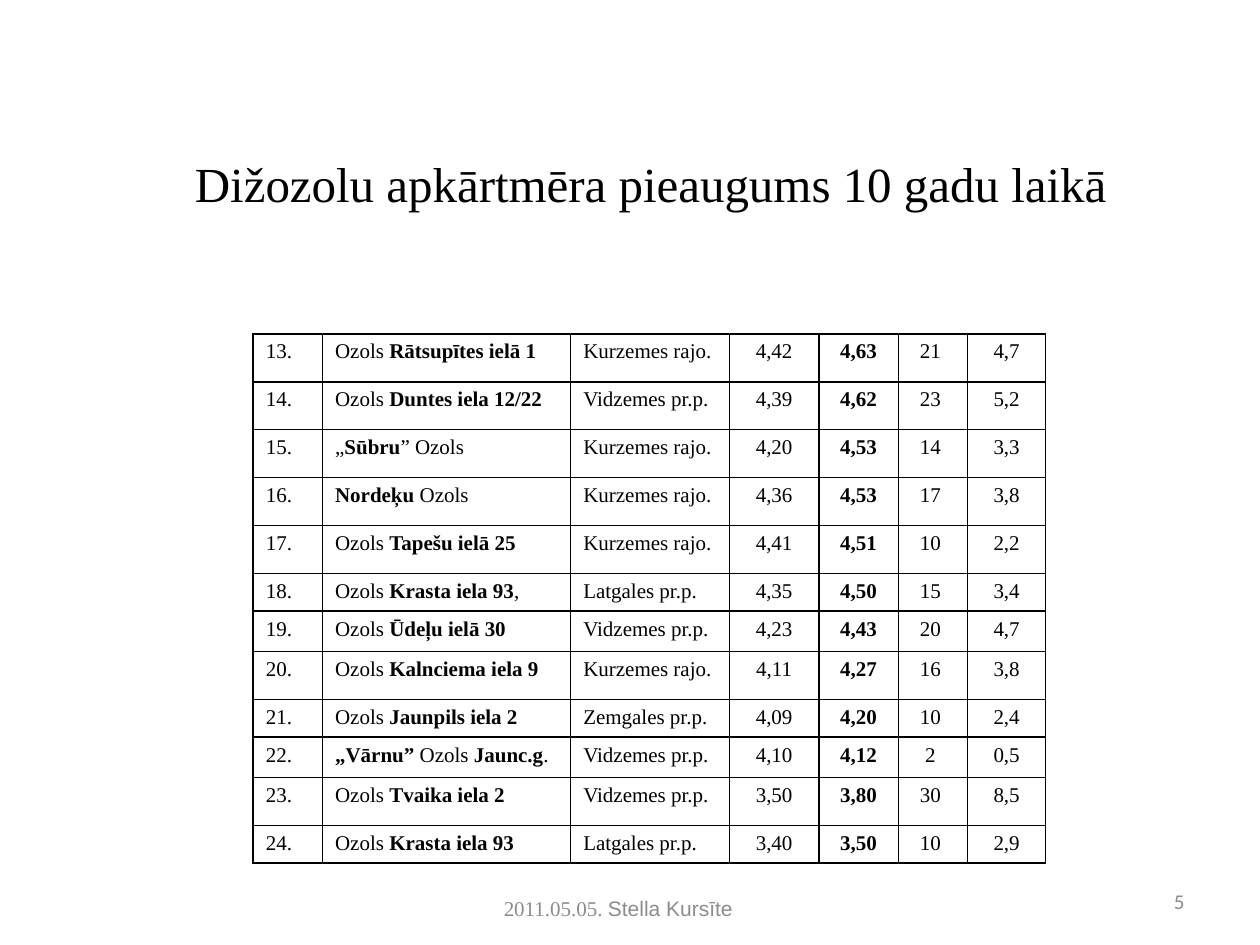
from dataclasses import dataclass

from lxml.etree import SubElement
from pptx import Presentation
from pptx.dml.color import RGBColor
from pptx.enum.text import MSO_ANCHOR, PP_ALIGN
from pptx.oxml import parse_xml
from pptx.oxml.ns import nsdecls, qn
from pptx.util import Inches, Pt


@dataclass(frozen=True)
class Theme:
    """Fonts, colours and type sizes of the slide."""
    serif: str = "Times New Roman"
    sans: str = "Arial"
    page: str = "Calibri"
    ink: str = "000000"
    grey: str = "8C8C8C"
    head: int = 28
    body: int = 12
    rule: int = 1


def write(para, text, font, size, color, bold=False, align=PP_ALIGN.LEFT):
    """Add text to a paragraph; asterisks switch bold on and off."""
    para.alignment = align
    for i, part in enumerate(text.split("*")):
        if part:
            run = para.add_run()
            run.text = part
            run.font.name = font
            run.font.size = Pt(size)
            run.font.bold = bold or i % 2 == 1
            run.font.color.rgb = RGBColor.from_string(color)


class Deck:
    """Draw on the current slide in a grid of 100 columns and 75 rows."""

    def __init__(self, theme):
        """Start a deck with one blank slide."""
        self.theme = theme
        self.prs = Presentation()
        self.prs.slide_width = Inches(10)
        self.prs.slide_height = Inches(7.5)
        self.slide = self.prs.slides.add_slide(self.prs.slide_layouts[6])

    def span(self, *cells):
        """Turn grid steps into lengths."""
        return [round(n * self.prs.slide_width / 100) for n in cells]

    def text(self, box, *parts, **form):
        """Place one line made of (text, font) parts."""
        frame = self.slide.shapes.add_textbox(*self.span(*box)).text_frame
        frame.word_wrap = True
        frame.vertical_anchor = MSO_ANCHOR.MIDDLE
        for words, font in parts:
            write(frame.paragraphs[0], words, font, **form)

    def border(self, cell):
        """Rule all four sides of a cell."""
        props = cell._tc.get_or_add_tcPr()
        for i, side in enumerate(("lnL", "lnR", "lnT", "lnB")):
            line = parse_xml(f'<a:{side} {nsdecls("a")} w="{Pt(self.theme.rule)}"/>')
            fill = SubElement(line, qn("a:solidFill"))
            SubElement(fill, qn("a:srgbClr"), val=self.theme.ink)
            props.insert(i, line)

    def table(self, spot, cols, rows, data, mid, strong):
        """Place a ruled table; mid is the first centred column."""
        look = self.theme
        size = self.span(*spot, sum(cols), sum(rows))
        grid = self.slide.shapes.add_table(len(rows), len(cols), *size).table
        grid.first_row = grid.horz_banding = False
        for col, wide in zip(grid.columns, self.span(*cols)):
            col.width = wide
        for row, high, line in zip(grid.rows, self.span(*rows), data):
            row.height = high
            for i, (cell, words) in enumerate(zip(row.cells, line)):
                cell.fill.background()
                self.border(cell)
                para = cell.text_frame.paragraphs[0]
                write(para, words, look.serif, look.body, look.ink, i == strong,
                      PP_ALIGN.CENTER if i >= mid else PP_ALIGN.LEFT)
                hang = self.span(3.8)[0]
                props = para._p.get_or_add_pPr()
                props.set("marL", str(hang))
                props.set("indent", str(-hang))


KURZEME, VIDZEME = "Kurzemes rajo.", "Vidzemes pr.p."
LATGALE, ZEMGALE = "Latgales pr.p.", "Zemgales pr.p."
TALL, MID, LOW = 3.8, 3.2, 2.8
OAKS = [
    (TALL, "Ozols *Rātsupītes ielā 1*", KURZEME, "4,42", "4,63", "21 ", "4,7"),
    (TALL, "Ozols *Duntes iela 12/22*", VIDZEME, "4,39", "4,62", "23 ", "5,2"),
    (TALL, "„*Sūbru*” Ozols", KURZEME, "4,20", "4,53", "14 ", "3,3"),
    (TALL, "*Nordeķu* Ozols", KURZEME, "4,36", "4,53", "17 ", "3,8"),
    (TALL, "Ozols *Tapešu ielā 25*", KURZEME, "4,41", "4,51", "10 ", "2,2"),
    (LOW, "Ozols *Krasta iela 93*,", LATGALE, "4,35", "4,50", "15 ", "3,4"),
    (MID, "Ozols *Ūdeļu ielā 30*", VIDZEME, "4,23", "4,43", "20 ", "4,7"),
    (TALL, "Ozols *Kalnciema iela 9*", KURZEME, "4,11", "4,27", "16 ", "3,8"),
    (LOW, "Ozols *Jaunpils iela 2*", ZEMGALE, "4,09", "4,20", "10 ", "2,4"),
    (MID, "*„Vārnu” *Ozols *Jaunc.g*.", VIDZEME, "4,10", "4,12", "2 ", "0,5"),
    (TALL, "Ozols *Tvaika iela 2*", VIDZEME, "3,50", "3,80", "30 ", "8,5"),
    (LOW, "Ozols *Krasta iela 93*", LATGALE, "3,40", "3,50", "10 ", "2,9"),
]


def main():
    """Build and save the slide."""
    look = Theme()
    deck = Deck(look)
    small = {"size": look.body, "color": look.grey}
    deck.text((39, 70.6, 23.3, 3), ("2011.05.05. ", look.serif),
              ("Stella Kursīte", look.sans), **small)
    deck.text((71.7, 69.5, 23.3, 4), ("5", look.page),
              align=PP_ALIGN.RIGHT, **small)
    deck.text((8.3, 8.3, 86.7, 12.5),
              ("Dižozolu apkārtmēra pieaugums 10 gadu laikā", look.serif),
              size=look.head, color=look.ink, align=PP_ALIGN.CENTER)
    data = [(f"{n}.", *oak[1:]) for n, oak in enumerate(OAKS, 13)]
    deck.table((20.1, 26.5), (5.5, 19.7, 12.6, 7.1, 6.3, 5.5, 6.2),
               [oak[0] for oak in OAKS], data, mid=3, strong=4)
    deck.prs.save("out.pptx")


if __name__ == "__main__":
    main()
